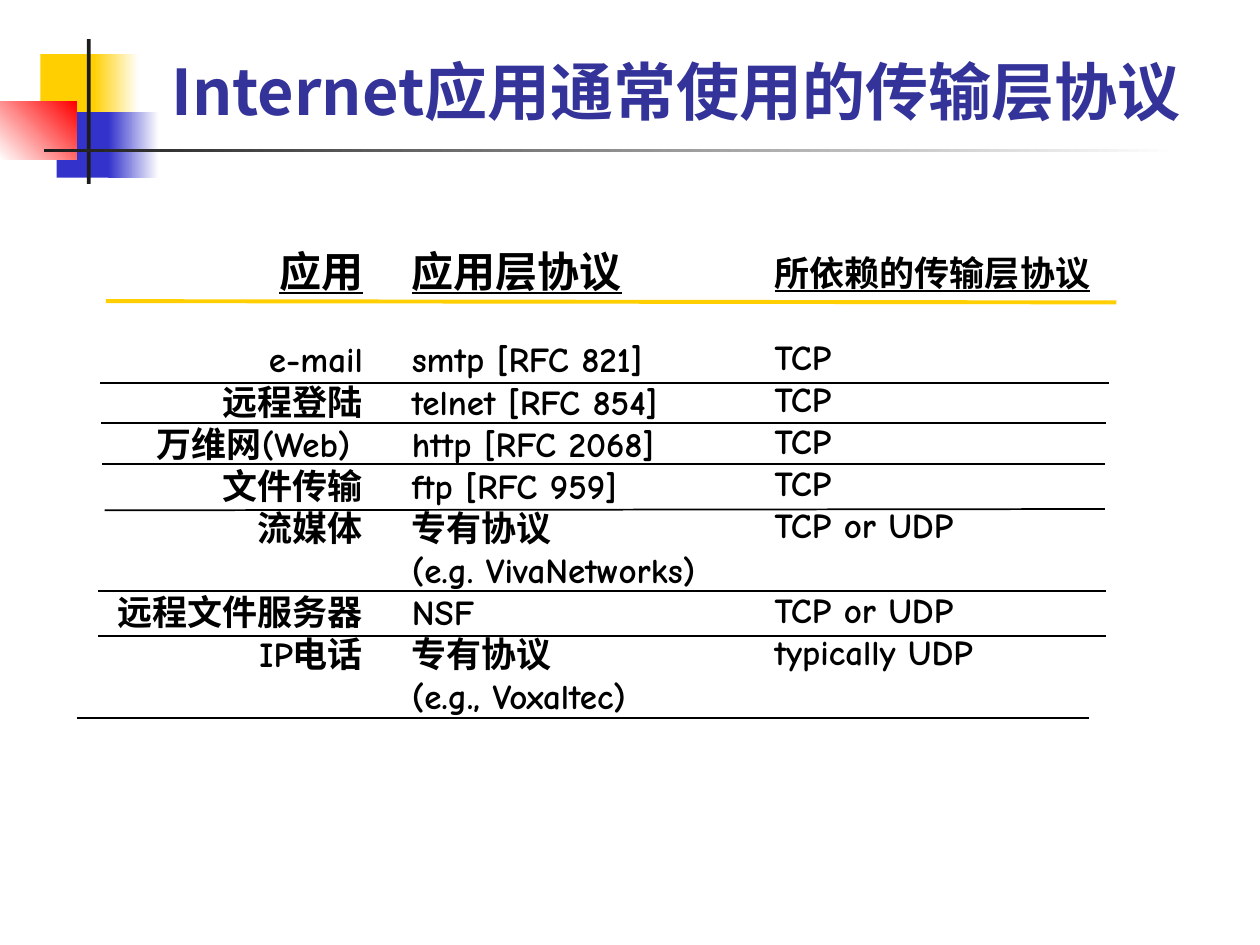
from lxml import etree
from pptx import Presentation
from pptx import util as u
from pptx.dml.color import RGBColor
from pptx.enum import shapes, text
from pptx.oxml import ns

BLACK, WHITE, YELLOW = "000000", "FFFFFF", "FFCF01"
BLUE, RED, CHARCOAL = "3333CC", "FF0000", "1C1C1C"
TITLE_COLOR = "333399"
TITLE_FONT, BODY_FONT = "Noto Sans CJK SC", "Comic Neue"
BODY_SIZE, ROW_PITCH = 20, 24


def rgb(value):
    return RGBColor.from_string(value)


class SlideBuilder:
    def __init__(self, prs):
        self.s = prs.slides.add_slide(prs.slide_layouts[5])

    def place(self, sp, box):
        sp.left, sp.top, sp.width, sp.height = [u.Inches(v) for v in box]

    def style(self, p, font, size, color, underline=False):
        for r in p.runs:
            r.font.size = u.Pt(size)
            r.font.bold = True
            r.font.underline = underline
            r.font.color.rgb = rgb(color)
            r.font.name = font
            ea = etree.SubElement(r.font._element, ns.qn("a:ea"))
            ea.set("typeface", font)

    def title(self, wording, box):
        sp = self.s.shapes.title
        self.place(sp, box)
        tf = sp.text_frame
        tf.text = wording
        tf.word_wrap = True
        tf.auto_size = text.MSO_AUTO_SIZE.NONE
        tf.vertical_anchor = text.MSO_ANCHOR.BOTTOM
        p = tf.paragraphs[0]
        p.alignment = text.PP_ALIGN.LEFT
        self.style(p, TITLE_FONT, 36, TITLE_COLOR)

    def block(self, box, color, fade_to=None, angle=0):
        sp = self.s.shapes.add_shape(shapes.MSO_SHAPE.RECTANGLE,
                                     *[u.Inches(v) for v in box])
        sp.shadow.inherit = False
        sp.line.fill.background()
        if fade_to:
            sp.fill.gradient()
            sp.fill.gradient_angle = angle
            for stop, value in zip(sp.fill.gradient_stops, (color, fade_to)):
                stop.color.rgb = rgb(value)
        else:
            sp.fill.solid()
            sp.fill.fore_color.rgb = rgb(color)

    def column(self, box, header, header_size, entries, align):
        sp = self.s.shapes.add_textbox(*[u.Inches(v) for v in box])
        tf = sp.text_frame
        tf.word_wrap = True
        tf.text = header
        p = tf.paragraphs[0]
        p.alignment = align
        self.style(p, BODY_FONT, header_size, BLACK, underline=True)
        gap = ROW_PITCH
        for entry in entries:
            if entry is None:
                gap = ROW_PITCH
                continue
            p = tf.add_paragraph()
            p.text = entry
            p.alignment = align
            p.space_before = u.Pt(gap)
            self.style(p, BODY_FONT, BODY_SIZE, BLACK)
            gap = 0

    def rule(self, x1, y1, x2, y2, color=BLACK, width=1):
        line = self.s.shapes.add_connector(
            shapes.MSO_CONNECTOR.STRAIGHT,
            *[u.Inches(v) for v in (x1, y1, x2, y2)])
        line.line.color.rgb = rgb(color)
        line.line.width = u.Pt(width)
        etree.SubElement(line._element.spPr, ns.qn("a:effectLst"))


def main():
    prs = Presentation()
    prs.slide_width, prs.slide_height = u.Inches(10), u.Inches(7.5)
    slide = SlideBuilder(prs)

    slide.block((0.32, 0.43, 0.48, 0.52), YELLOW)
    slide.block((0.74, 0.43, 0.36, 0.52), YELLOW, WHITE)
    slide.block((0.45, 0.89, 0.46, 0.52), BLUE)
    slide.block((0.86, 0.89, 0.4, 0.52), BLUE, WHITE)
    slide.block((0, 0.81, 0.61, 0.46), WHITE, RED, angle=45)
    slide.block((0.69, 0.31, 0.03, 1.15), CHARCOAL)
    slide.block((0.35, 1.18, 9, 0.03), CHARCOAL, WHITE)
    slide.title("Internet应用通常使用的传输层协议", (1.26, 0.23, 8.52, 0.84))

    left, right = text.PP_ALIGN.LEFT, text.PP_ALIGN.RIGHT
    applications = ["e-mail", "远程登陆", "万维网(Web) ", "文件传输", "流媒体",
                    None, "远程文件服务器", "IP电话"]
    protocols = ["smtp [RFC 821]", "telnet [RFC 854]", "http [RFC 2068]",
                 "ftp [RFC 959]", "专有协议", "(e.g. VivaNetworks)", "NSF",
                 "专有协议", "(e.g., Voxaltec)"]
    transports = ["TCP"] * 4 + ["TCP or UDP", None, "TCP or UDP",
                                "typically UDP"]
    slide.column((0.81, 1.9, 2.17, 3.94), "应用", 24, applications, right)
    slide.column((3.17, 1.9, 2.92, 3.87), "应用层协议", 24, protocols, left)
    slide.column((6.05, 1.95, 2.87, 3.43), "所依赖的传输层协议", 20,
                 transports, left)

    slide.rule(0.84, 2.39, 8.86, 2.4, YELLOW, 2.25)
    row_rules = [(0.79, 3.04, 8.8, 3.04), (0.8, 3.36, 8.78, 3.36),
                 (0.81, 3.68, 8.77, 3.68), (0.83, 4.05, 8.77, 4.04),
                 (0.78, 4.69, 8.78, 4.69), (0.78, 5.05, 8.78, 5.05),
                 (0.61, 5.7, 8.64, 5.7)]
    for ends in row_rules:
        slide.rule(*ends)

    prs.save("out.pptx")


if __name__ == "__main__":
    main()
